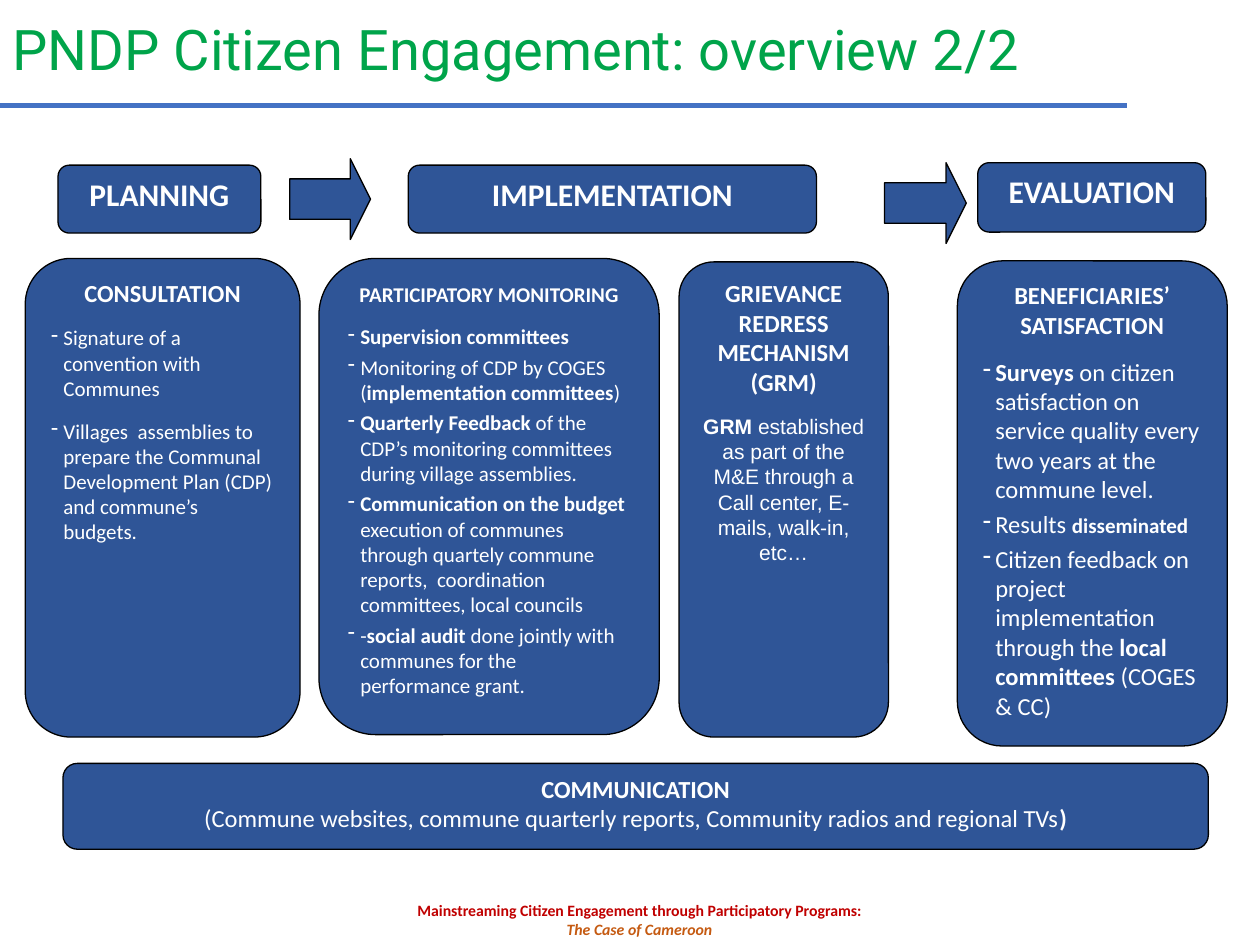
from typing import NamedTuple

from lxml import etree
from pptx import Presentation
from pptx.dml.color import RGBColor
from pptx.enum.shapes import MSO_CONNECTOR, MSO_SHAPE
from pptx.enum.text import MSO_ANCHOR, PP_ALIGN
from pptx.oxml.ns import qn
from pptx.util import Cm, Pt

ROUNDED, ARROW = MSO_SHAPE.ROUNDED_RECTANGLE, MSO_SHAPE.RIGHT_ARROW
STRAIGHT = MSO_CONNECTOR.STRAIGHT
TOP, MIDDLE = MSO_ANCHOR.TOP, MSO_ANCHOR.MIDDLE
LEFT, CENTER = PP_ALIGN.LEFT, PP_ALIGN.CENTER

NAVY, BLACK, WHITE = "2F5597", "000000", "FFFFFF"
GREEN, RULE_BLUE, RED, ORANGE = "00A44A", "4472C4", "C00000", "C55A11"
HANGING = Cm(0.25)


class Area(NamedTuple):
    left: float
    top: float
    width: float
    height: float


class Span(NamedTuple):
    text: str
    size: float = 12
    bold: bool = False
    font: str = "Calibri"
    color: str = WHITE
    italic: bool = False


class Para(NamedTuple):
    spans: list[Span]
    align: PP_ALIGN = LEFT
    after: float = 0
    dash: bool = False


class Panel(NamedTuple):
    area: Area
    paras: list[Para]


def rgb(value: str) -> RGBColor:
    return RGBColor.from_string(value)


def heading(text: str, size: float, after: float = 10) -> Para:
    return Para([Span(text, size, True)], CENTER, after)


def item(*spans: Span, after: float = 3) -> Para:
    return Para(list(spans), LEFT, after, True)


def add_dash(paragraph) -> None:
    props = paragraph._p.get_or_add_pPr()
    props.set("marL", str(int(HANGING)))
    props.set("indent", str(-int(HANGING)))
    etree.SubElement(props, qn("a:buChar")).set("char", "-")


def add_span(paragraph, span: Span) -> None:
    run = paragraph.add_run()
    run.text = span.text
    font = run.font
    font.name, font.size = span.font, Pt(span.size)
    font.bold, font.italic = span.bold, span.italic
    font.color.rgb = rgb(span.color)


def write(frame, paras: list[Para], anchor: MSO_ANCHOR = TOP) -> None:
    frame.word_wrap = True
    frame.vertical_anchor = anchor
    for index, para in enumerate(paras):
        paragraph = frame.add_paragraph() if index else frame.paragraphs[0]
        if para.dash:
            add_dash(paragraph)
        paragraph.alignment = para.align
        paragraph.space_after = Pt(para.after)
        for span in para.spans:
            add_span(paragraph, span)


def draw_block(slide, kind: MSO_SHAPE, area: Area):
    block = slide.shapes.add_shape(kind, *map(Cm, area))
    block.shadow.inherit = False
    block.fill.solid()
    block.fill.fore_color.rgb = rgb(NAVY)
    block.line.color.rgb = rgb(BLACK)
    block.line.width = Pt(0.75)
    return block


def draw_panel(slide, panel: Panel) -> None:
    write(draw_block(slide, ROUNDED, panel.area).text_frame, panel.paras)


def draw_arrow(slide, area: Area) -> None:
    draw_block(slide, ARROW, area).adjustments[1] = 0.25


def draw_text(slide, area: Area, paras: list[Para]):
    frame = slide.shapes.add_textbox(*map(Cm, area)).text_frame
    write(frame, paras, MIDDLE)
    return frame


STAGES = [
    Panel(Area(1.17, 3.33, 4.09, 1.37), [heading("PLANNING", 18)]),
    Panel(Area(8.23, 3.33, 8.23, 1.37), [heading("IMPLEMENTATION", 18)]),
    Panel(Area(19.71, 3.28, 4.6, 1.4), [heading("EVALUATION", 18)]),
]
ARROWS = [Area(5.84, 3.2, 1.63, 1.63), Area(17.83, 3.28, 1.65, 1.63)]

CONSULTATION = Panel(Area(0.51, 5.21, 5.54, 9.65), [
    heading("CONSULTATION", 14),
    item(Span("Signature of a convention with Communes"), after=10),
    item(Span("Villages  assemblies to prepare the Communal Development "
              "Plan (CDP) and commune’s budgets."), after=10),
])
MONITORING = Panel(Area(6.43, 5.21, 6.86, 9.6), [
    heading("PARTICIPATORY MONITORING", 12),
    item(Span("Supervision committees", bold=True)),
    item(Span("Monitoring of CDP by COGES ("),
         Span("implementation committees", bold=True), Span(")")),
    item(Span("Quarterly Feedback ", bold=True),
         Span("of the CDP’s monitoring committees during village assemblies.")),
    item(Span("Communication on the budget ", bold=True),
         Span("execution of communes through quartely commune reports,  "
              "coordination committees, local councils")),
    item(Span("-"), Span("social audit ", bold=True),
         Span("done jointly with communes for the performance grant.")),
])
GRIEVANCE = Panel(Area(13.69, 5.28, 4.22, 9.58), [
    heading("GRIEVANCE REDRESS MECHANISM (GRM)", 14),
    Para([Span("GRM ", 12, True, "Arial"),
          Span("established as part of the M&E through a Call center, "
               "E-mails, walk-in, etc…", 12, False, "Arial")], CENTER, 10),
])
SATISFACTION = Panel(Area(19.3, 5.26, 5.44, 9.78), [
    heading("BENEFICIARIES’ SATISFACTION", 14),
    item(Span("Surveys", 14, True),
         Span(" on citizen satisfaction on service quality every two years "
              "at the commune level.", 14)),
    item(Span("Results ", 14), Span("disseminated", 12, True)),
    item(Span("Citizen feedback on project implementation through the ", 14),
         Span("local committees ", 14, True), Span("(COGES & CC)", 14)),
])
COMMUNICATION = Panel(Area(1.27, 15.39, 23.09, 1.73), [
    heading("COMMUNICATION", 14, 0),
    Para([Span("(Commune websites, commune quarterly reports, Community "
               "radios and regional TVs", 14), Span(")", 14, True)], CENTER),
])


def main() -> None:
    deck = Presentation()
    deck.slide_width, deck.slide_height = Cm(25.4), Cm(19.05)
    slide = deck.slides.add_slide(deck.slide_layouts[6])

    # Title and rule
    title = draw_text(slide, Area(0, 0.33, 23.9, 1.45), [
        Para([Span("PNDP Citizen Engagement: overview 2/2", 32,
                   font="Roboto", color=GREEN)])])
    title.paragraphs[0].line_spacing = 0.9
    rule = slide.shapes.add_connector(STRAIGHT, 0, Cm(2.13), Cm(22.71), Cm(2.13))
    rule.line.color.rgb = rgb(RULE_BLUE)
    rule.line.width = Pt(3)
    etree.SubElement(rule._element.spPr, qn("a:effectLst"))

    # Stages, their activities and the communication base
    for panel in [*STAGES, CONSULTATION, MONITORING, GRIEVANCE,
                  SATISFACTION, COMMUNICATION]:
        draw_panel(slide, panel)
    for area in ARROWS:
        draw_arrow(slide, area)

    # Footer
    footer = draw_text(slide, Area(7.95, 18.03, 9.88, 1.02), [
        Para([Span("Mainstreaming Citizen Engagement through Participatory "
                   "Programs:", 9, True, color=RED)], CENTER)])
    footer.paragraphs[0].add_line_break()
    add_span(footer.paragraphs[0],
             Span("The Case of Cameroon", 9, True, color=ORANGE, italic=True))

    deck.save("out.pptx")


if __name__ == "__main__":
    main()
